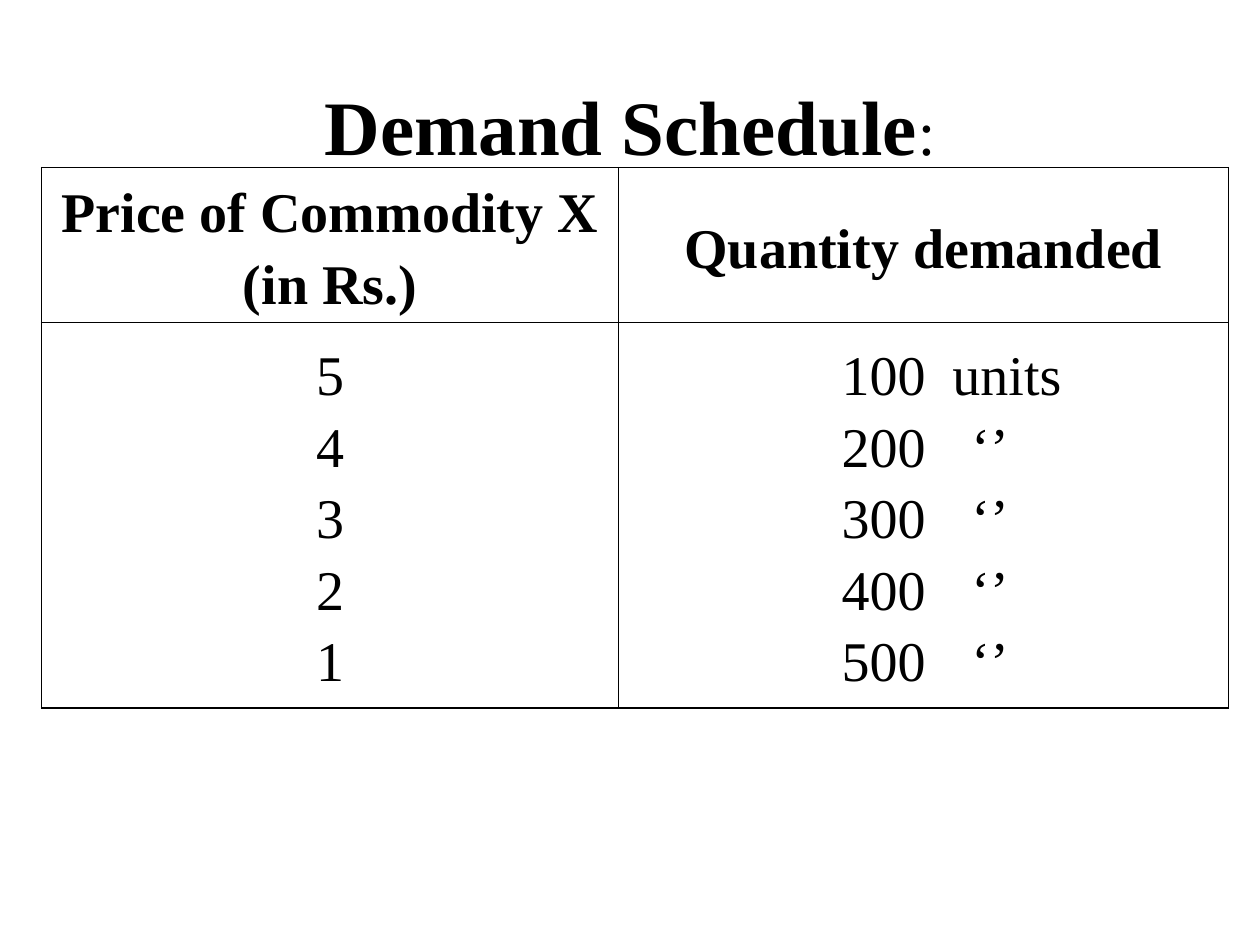
from dataclasses import dataclass

from lxml import etree
from pptx import Presentation
from pptx.dml.color import RGBColor
from pptx.enum.text import MSO_ANCHOR, MSO_AUTO_SIZE, PP_ALIGN
from pptx.oxml.ns import qn
from pptx.util import Inches, Pt

CENTER, LEFT = PP_ALIGN.CENTER, PP_ALIGN.LEFT
TOP, MIDDLE = MSO_ANCHOR.TOP, MSO_ANCHOR.MIDDLE
TITLE_ONLY = 5


@dataclass(frozen=True)
class Theme:
    font: str = "Times New Roman"
    ink: str = "000000"
    title_size: int = 44
    colon_size: int = 36
    table_size: int = 32
    line_spacing: float = 1.15
    border_width: float = 1


THEME = Theme()
HEADERS = (["Price of Commodity X", "(in Rs.)"], ["Quantity demanded"])
SCHEDULE = [(5, 100, "units"), (4, 200, "‘’"), (3, 300, "‘’"),
            (2, 400, "‘’"), (1, 500, "‘’")]
UNIT_TABS = {"units": 0.88, "‘’": 1.03}
QUANTITY_INDENT = 1.77
COLUMN_WIDTHS = (4.58, 4.84)
ROW_HEIGHTS = (1.23, 3.06)


def set_attributes(target, values):
    for name, value in values.items():
        setattr(target, name, value)


def add_run(paragraph, text, size, bold=False):
    run = paragraph.add_run()
    run.text = text
    set_attributes(run.font, {"name": THEME.font, "size": Pt(size), "bold": bold})
    run.font.color.rgb = RGBColor.from_string(THEME.ink)


def add_title(slide):
    title = slide.shapes.title
    set_attributes(title, {"left": 0, "top": Inches(0.5),
                           "width": Inches(10), "height": Inches(1.14)})
    frame = title.text_frame
    set_attributes(frame, {"auto_size": MSO_AUTO_SIZE.NONE, "word_wrap": True,
                           "vertical_anchor": TOP, "margin_top": Inches(0.12)})
    paragraph = frame.paragraphs[0]
    paragraph.alignment = CENTER
    add_run(paragraph, "Demand Schedule", THEME.title_size, bold=True)
    add_run(paragraph, ":", THEME.colon_size)


def add_borders(cell):
    """Line all four sides; borders must come before the fill in the cell."""
    properties = cell._tc.get_or_add_tcPr()
    for index, side in enumerate(("lnL", "lnR", "lnT", "lnB")):
        line = etree.Element(qn(f"a:{side}"), w=str(Pt(THEME.border_width)))
        fill = etree.SubElement(line, qn("a:solidFill"))
        etree.SubElement(fill, qn("a:srgbClr"), val=THEME.ink)
        properties.insert(index, line)


def add_tab_stop(paragraph, position):
    tab_list = etree.SubElement(paragraph._p.get_or_add_pPr(), qn("a:tabLst"))
    etree.SubElement(tab_list, qn("a:tab"), pos=str(Inches(position)), algn="l")


def fill_cell(cell, lines, bold=False, alignment=CENTER, indent=0.07, tabs=()):
    """Write one paragraph per line, with one tab stop each if tabs are given."""
    set_attributes(cell, {"vertical_anchor": MIDDLE, "margin_left": Inches(indent),
                          "margin_right": Inches(0.07),
                          "margin_top": 0, "margin_bottom": 0})
    cell.fill.background()
    add_borders(cell)
    frame = cell.text_frame
    for index, line in enumerate(lines):
        paragraph = frame.add_paragraph() if index else frame.paragraphs[0]
        set_attributes(paragraph, {"alignment": alignment,
                                   "line_spacing": THEME.line_spacing})
        if tabs:
            add_tab_stop(paragraph, tabs[index])
        add_run(paragraph, line, THEME.table_size, bold)


def add_schedule_table(slide):
    table = slide.shapes.add_table(
        2, 2, Inches(0.33), Inches(1.33),
        Inches(sum(COLUMN_WIDTHS)), Inches(sum(ROW_HEIGHTS))).table
    set_attributes(table, {"first_row": False, "horz_banding": False})
    for column, width in zip(table.columns, COLUMN_WIDTHS):
        column.width = Inches(width)
    for row, height in zip(table.rows, ROW_HEIGHTS):
        row.height = Inches(height)

    for index, lines in enumerate(HEADERS):
        fill_cell(table.cell(0, index), lines, bold=True)
    fill_cell(table.cell(1, 0), [str(price) for price, _, _ in SCHEDULE])
    fill_cell(table.cell(1, 1),
              [f"{quantity}\t{unit}" for _, quantity, unit in SCHEDULE],
              alignment=LEFT, indent=QUANTITY_INDENT,
              tabs=[UNIT_TABS[unit] for _, _, unit in SCHEDULE])


def main():
    presentation = Presentation()
    set_attributes(presentation, {"slide_width": Inches(10),
                                  "slide_height": Inches(7.5)})
    slide = presentation.slides.add_slide(presentation.slide_layouts[TITLE_ONLY])
    add_schedule_table(slide)
    add_title(slide)
    presentation.save("out.pptx")


if __name__ == "__main__":
    main()
